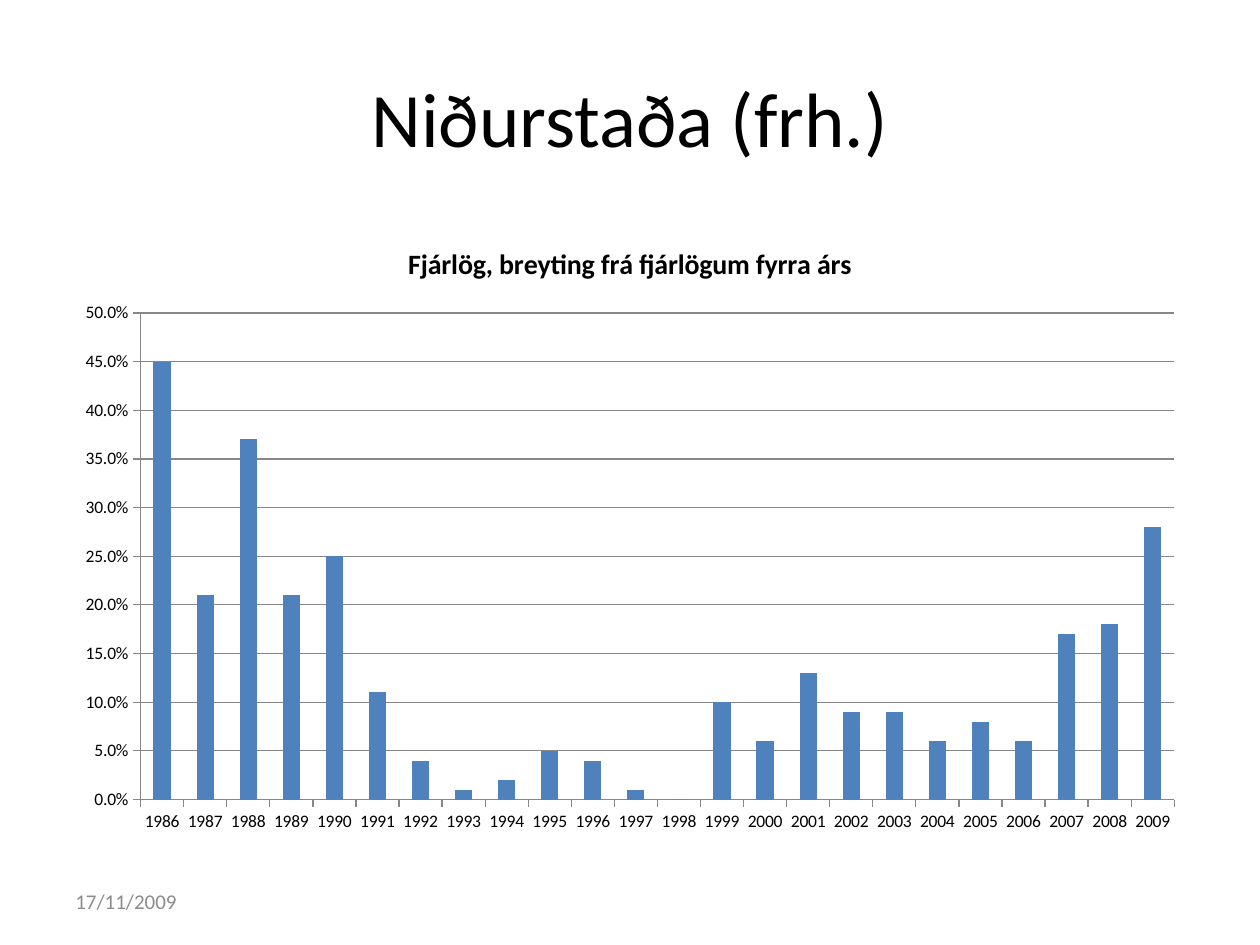
from pptx import Presentation
from pptx import util as u
from pptx.chart import data
from pptx.dml.color import RGBColor
from pptx.enum import chart as ch
from pptx.enum import text

BLACK = RGBColor(0x00, 0x00, 0x00)
GREY = RGBColor(0x8C, 0x8C, 0x8C)
AXIS_GREY = RGBColor(0x87, 0x87, 0x87)
BLUE = RGBColor(0x4F, 0x81, 0xBD)
FONT = "Calibri"

YEARS = [str(year) for year in range(1986, 2010)]
CHANGES = [
    0.45, 0.21, 0.37, 0.21, 0.25, 0.11, 0.04, 0.01,
    0.02, 0.05, 0.04, 0.01, 0, 0.1, 0.06, 0.13,
    0.09, 0.09, 0.06, 0.08, 0.06, 0.17, 0.18, 0.28,
]


def style_font(font, size, color=BLACK, bold=False):
    font.name = FONT
    font.size = u.Pt(size)
    font.bold = bold
    font.color.rgb = color


def write(tf, content, size, color=BLACK, bold=False, align=text.PP_ALIGN.LEFT):
    p = tf.paragraphs[0]
    p.alignment = align
    r = p.add_run()
    r.text = content
    for font in (p.font, r.font):
        style_font(font, size, color, bold)


class Deck:
    def __init__(self, width, height):
        self.prs = Presentation()
        self.prs.slide_width = u.Inches(width)
        self.prs.slide_height = u.Inches(height)
        self.s = self.prs.slides.add_slide(self.prs.slide_layouts[5])

    def title(self, content, box):
        sp = self.s.shapes.title
        sp.left, sp.top, sp.width, sp.height = map(u.Inches, box)
        sp.text_frame.vertical_anchor = text.MSO_ANCHOR.MIDDLE
        write(sp.text_frame, content, 44, align=text.PP_ALIGN.CENTER)

    def label(self, content, box, size, color):
        tf = self.s.shapes.add_textbox(*map(u.Inches, box)).text_frame
        tf.word_wrap = True
        tf.vertical_anchor = text.MSO_ANCHOR.MIDDLE
        write(tf, content, size, color)

    def column_chart(self, heading, categories, values, box):
        cd = data.CategoryChartData(number_format="0.0%")
        cd.categories = categories
        cd.add_series("Series 1", values)
        chart = self.s.shapes.add_chart(
            ch.XL_CHART_TYPE.COLUMN_CLUSTERED, *map(u.Inches, box), cd
        ).chart
        style_font(chart.font, 10)
        chart.has_legend = False
        chart.has_title = True
        write(chart.chart_title.text_frame, heading, 16, bold=True,
              align=text.PP_ALIGN.CENTER)
        chart.chart_title.include_in_layout = False

        plot = chart.plots[0]
        plot.gap_width = 150
        plot.vary_by_categories = False
        fill = plot.series[0].format.fill
        fill.solid()
        fill.fore_color.rgb = BLUE

        axis = chart.value_axis
        axis.minimum_scale = 0
        axis.maximum_scale = 0.5
        axis.major_unit = 0.05
        axis.has_major_gridlines = True
        axis.tick_labels.number_format = "0.0%"
        axis.tick_labels.number_format_is_linked = False
        chart.category_axis.has_major_gridlines = False
        for part in (axis, chart.category_axis):
            part.major_tick_mark = ch.XL_TICK_MARK.OUTSIDE
            part.minor_tick_mark = ch.XL_TICK_MARK.NONE
        for part in (axis, chart.category_axis, axis.major_gridlines):
            part.format.line.color.rgb = AXIS_GREY
            part.format.line.width = u.Pt(0.75)


def main():
    deck = Deck(10, 7.5)
    deck.title("Niðurstaða (frh.)", (0.5, 0.3, 9, 1.25))
    deck.label("17/11/2009", (0.5, 6.95, 2.33, 0.4), 12, GREY)
    deck.column_chart("Fjárlög, breyting frá fjárlögum fyrra árs",
                      YEARS, CHANGES, (0.5, 1.75, 9, 4.95))
    deck.prs.save("out.pptx")


if __name__ == "__main__":
    main()
